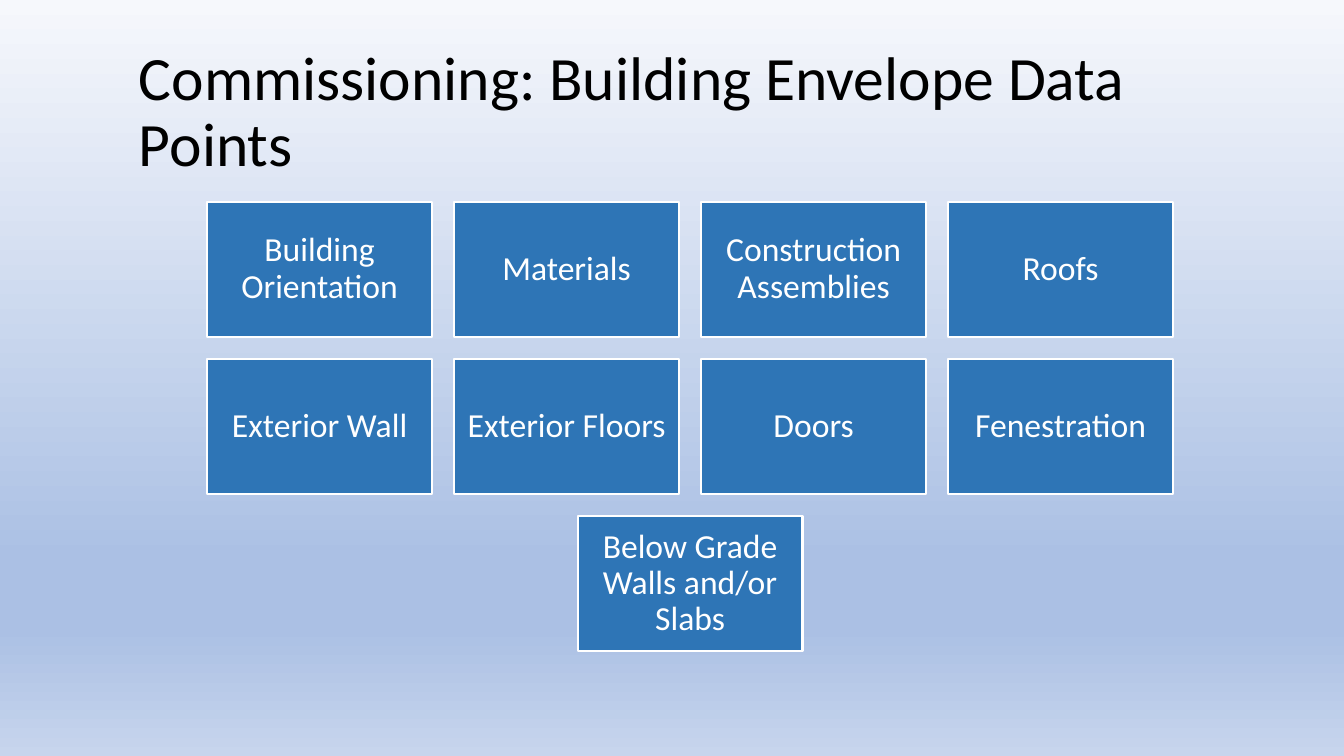
from pptx import Presentation
from pptx.dml.color import RGBColor
from pptx.enum.shapes import MSO_SHAPE
from pptx.enum.text import MSO_ANCHOR, PP_ALIGN
from pptx.oxml.ns import qn
from pptx.util import Inches, Pt
from lxml.etree import SubElement

# Content
TITLE = "Commissioning: Building Envelope Data Points"
ROWS = [
    ["Building Orientation", "Materials", "Construction Assemblies", "Roofs"],
    ["Exterior Wall", "Exterior Floors", "Doors", "Fenestration"],
    ["Below Grade Walls and/or Slabs"],
]

# Style
FONT = "Calibri"
BLACK = RGBColor(0x00, 0x00, 0x00)
WHITE = RGBColor(0xFF, 0xFF, 0xFF)
BLUE = RGBColor(0x2E, 0x75, 0xB6)
SKY = [
    (0, RGBColor(0xF6, 0xF8, 0xFC)),
    (74, RGBColor(0xAB, 0xC0, 0xE4)),
    (83, RGBColor(0xAB, 0xC0, 0xE4)),
    (100, RGBColor(0xC7, 0xD5, 0xED)),
]

# Grid, in inches
WIDE, HIGH = 13.33, 7.5
BOX_W, BOX_H, GAP = 2.23, 1.34, 0.22
MID, TOP = 6.845, 2.0


def write(shape, text, size, color, align=PP_ALIGN.LEFT, pad=(0.1, 0.05)):
    frame = shape.text_frame
    frame.word_wrap = True
    frame.vertical_anchor = MSO_ANCHOR.MIDDLE
    frame.margin_left = frame.margin_right = Inches(pad[0])
    frame.margin_top = frame.margin_bottom = Inches(pad[1])
    para = frame.paragraphs[0]
    para.text = text
    para.alignment = align
    para.line_spacing = 0.9
    font = para.runs[0].font
    font.name, font.size, font.color.rgb = FONT, Pt(size), color


deck = Presentation()
deck.slide_width, deck.slide_height = Inches(WIDE), Inches(HIGH)
slide = deck.slides.add_slide(deck.slide_layouts[6])

# Background gradient, top to bottom
fill = slide.background.fill
fill.gradient()
fill.gradient_angle = 270
stops = next(slide.element.iter(qn("a:gsLst")))
for old in list(stops):
    stops.remove(old)
for share, color in SKY:
    stop = SubElement(stops, qn("a:gs"), pos=str(share * 1000))
    SubElement(stop, qn("a:srgbClr"), val=str(color))

# Title
head = slide.shapes.add_textbox(
    Inches(1.28), Inches(0.4), Inches(11.14), Inches(1.45))
write(head, TITLE, 44, BLACK)

# Boxes, each row centred on the same axis
for row, names in enumerate(ROWS):
    span = len(names) * (BOX_W + GAP) - GAP
    for col, name in enumerate(names):
        left = MID - span / 2 + col * (BOX_W + GAP)
        top = TOP + row * (BOX_H + GAP)
        box = slide.shapes.add_shape(
            MSO_SHAPE.RECTANGLE,
            Inches(left), Inches(top), Inches(BOX_W), Inches(BOX_H))
        box.shadow.inherit = False
        box.fill.solid()
        box.fill.fore_color.rgb = BLUE
        box.line.color.rgb = WHITE
        box.line.width = Pt(1.5)
        write(box, name, 24, WHITE, PP_ALIGN.CENTER, (0.1, 0.1))

deck.save("out.pptx")
